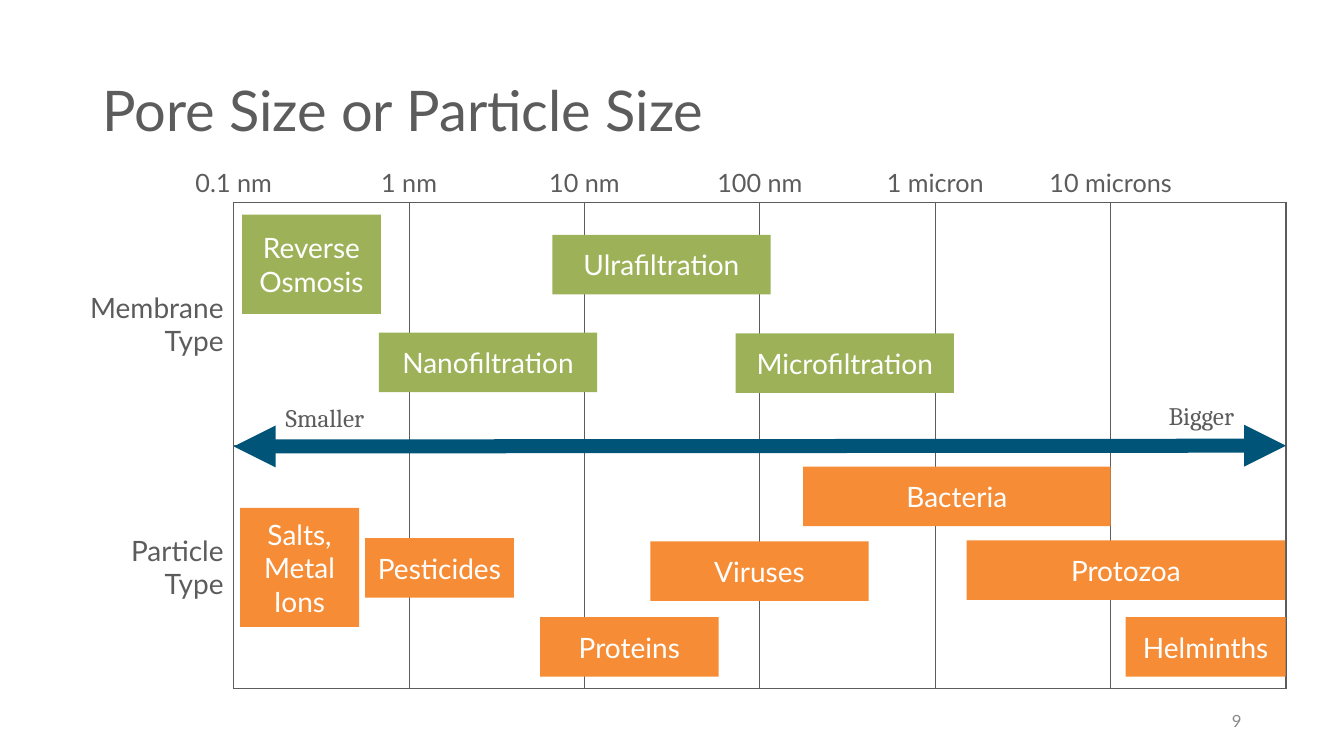
from dataclasses import dataclass

from lxml.etree import SubElement
from pptx import Presentation
from pptx.dml.color import RGBColor
from pptx.enum.shapes import MSO_CONNECTOR as Connector, MSO_SHAPE as Shape
from pptx.enum.text import MSO_ANCHOR as Anchor, MSO_AUTO_SIZE as AutoSize, PP_ALIGN as Align
from pptx.oxml import parse_xml
from pptx.oxml.ns import nsdecls, qn
from pptx.slide import Slide
from pptx.table import _Cell as Cell
from pptx.text.text import TextFrame
from pptx.util import Cm, Pt


@dataclass(frozen=True)
class Theme:
    text: str = "5C5C5C"
    page_number: str = "898989"
    on_bar: str = "FFFFFF"
    membrane: str = "9DB258"
    particle: str = "F68D36"
    arrow: str = "005478"
    font: str = "Lato"
    direction_font: str = "Cambria"
    title_size: int = 40
    body_size: int = 20
    label_size: int = 18
    number_size: int = 12
    arrow_width: int = 10
    grid_width: int = 1


THEME = Theme()


@dataclass(frozen=True)
class Bar:
    """A size range; lengths in centimetres."""
    text: str
    left: float
    top: float
    width: float
    height: float = 1.5


@dataclass(frozen=True)
class Tick:
    text: str
    width: float


TABLE_LEFT, TABLE_TOP = 1.47, 5.11
COLUMN_WIDTH, ROW_HEIGHT = 4.42, 6.12
COLUMN_COUNT = 7
GRID_LEFT = TABLE_LEFT + COLUMN_WIDTH
GRID_RIGHT = TABLE_LEFT + COLUMN_COUNT * COLUMN_WIDTH
ROW_LABELS = ("Membrane\nType", "Particle Type")

TICKS = (
    Tick("0.1 nm", 2.49),
    Tick("1 nm", 2.49),
    Tick("10 nm", 2.49),
    Tick("100 nm", 2.9),
    Tick("1 micron", 3.07),
    Tick("10 microns", 3.66),
)
MEMBRANES = (
    Bar("Reverse\nOsmosis", 6.1, 5.41, 3.5, 2.5),
    Bar("Nanofiltration", 9.55, 8.38, 5.5),
    Bar("Ulrafiltration", 13.92, 5.92, 5.5),
    Bar("Microfiltration", 18.54, 8.4, 5.5),
)
PARTICLES = (
    Bar("Salts, Metal Ions", 6.05, 12.8, 3, 3),
    Bar("Pesticides", 9.2, 13.56, 3.75),
    Bar("Proteins", 13.61, 15.55, 4.5),
    Bar("Viruses", 16.39, 13.64, 5.5),
    Bar("Bacteria", 20.24, 11.76, 7.75),
    Bar("Protozoa", 24.36, 13.62, 8.03),
    Bar("Helminths", 28.37, 15.55, 4.03),
)


def write_text(frame: TextFrame, text: str, *, size: int = THEME.body_size,
               color: str = THEME.text, font: str = THEME.font,
               align: Align = Align.LEFT, line_spacing: float = 1.0) -> None:
    """Write one paragraph per line of text."""
    for index, line in enumerate(text.split("\n")):
        paragraph = frame.add_paragraph() if index else frame.paragraphs[0]
        paragraph.alignment = align
        paragraph.line_spacing = line_spacing
        run = paragraph.add_run()
        run.text = line
        run.font.size = Pt(size)
        run.font.name = font
        run.font.color.rgb = RGBColor.from_string(color)


def add_text_box(slide: Slide, text: str, left: float, top: float, width: float,
                 height: float, *, anchor: Anchor = Anchor.TOP, wrap: bool = True,
                 grow: bool = False, **text_format) -> None:
    box = slide.shapes.add_textbox(Cm(left), Cm(top), Cm(width), Cm(height))
    frame = box.text_frame
    frame.word_wrap = wrap
    frame.auto_size = AutoSize.SHAPE_TO_FIT_TEXT if grow else AutoSize.NONE
    frame.vertical_anchor = anchor
    write_text(frame, text, **text_format)


def set_borders(cell: Cell, visible_sides: str) -> None:
    """Draw the sides named by L, R, T and B, and hide the others."""
    properties = cell._tc.get_or_add_tcPr()
    for index, side in enumerate("LRTB"):
        fill = (f'<a:solidFill><a:srgbClr val="{THEME.text}"/></a:solidFill>'
                if side in visible_sides else "<a:noFill/>")
        border = parse_xml(f'<a:ln{side} {nsdecls("a")} w="{Pt(THEME.grid_width)}">'
                           f'{fill}</a:ln{side}>')
        properties.insert(index, border)


def add_grid(slide: Slide) -> None:
    rows = len(ROW_LABELS)
    table = slide.shapes.add_table(
        rows, COLUMN_COUNT, Cm(TABLE_LEFT), Cm(TABLE_TOP),
        Cm(COLUMN_COUNT * COLUMN_WIDTH), Cm(rows * ROW_HEIGHT)).table
    table.first_row = False
    table.horz_banding = False
    for column in table.columns:
        column.width = Cm(COLUMN_WIDTH)
    for row, label in zip(table.rows, ROW_LABELS):
        row.height = Cm(ROW_HEIGHT)
        for index, cell in enumerate(row.cells):
            cell.fill.background()
            set_borders(cell, "LRTB" if index else "R")
        label_cell = row.cells[0]
        label_cell.vertical_anchor = Anchor.MIDDLE
        write_text(label_cell.text_frame, label, align=Align.RIGHT)


def add_size_arrow(slide: Slide) -> None:
    arrow = slide.shapes.add_connector(
        Connector.STRAIGHT, Cm(GRID_LEFT), Cm(11.25), Cm(GRID_RIGHT), Cm(11.23))
    arrow.line.color.rgb = RGBColor.from_string(THEME.arrow)
    arrow.line.width = Pt(THEME.arrow_width)
    line = arrow.line._get_or_add_ln()
    for end in ("a:headEnd", "a:tailEnd"):
        SubElement(line, qn(end), type="triangle")
    SubElement(arrow._element.spPr, qn("a:effectLst"))


def add_bar(slide: Slide, bar: Bar, color: str) -> None:
    shape = slide.shapes.add_shape(
        Shape.RECTANGLE, Cm(bar.left), Cm(bar.top), Cm(bar.width), Cm(bar.height))
    shape.shadow.inherit = False
    shape.fill.solid()
    shape.fill.fore_color.rgb = RGBColor.from_string(color)
    shape.line.fill.background()
    shape.text_frame.word_wrap = True
    shape.text_frame.vertical_anchor = Anchor.MIDDLE
    write_text(shape.text_frame, bar.text, color=THEME.on_bar, align=Align.CENTER)


def main() -> None:
    presentation = Presentation()
    presentation.slide_width, presentation.slide_height = Cm(33.87), Cm(19.05)
    slide = presentation.slides.add_slide(presentation.slide_layouts[6])

    add_text_box(slide, "Pore Size or Particle Size", 2.33, 1.01, 29.21, 3.68,
                 anchor=Anchor.MIDDLE, size=THEME.title_size, line_spacing=0.9)
    add_text_box(slide, "9", 23.92, 17.66, 7.62, 1.01, anchor=Anchor.MIDDLE,
                 size=THEME.number_size, color=THEME.page_number, align=Align.RIGHT)
    add_grid(slide)
    add_size_arrow(slide)

    for index, tick in enumerate(TICKS):
        center = GRID_LEFT + index * COLUMN_WIDTH
        add_text_box(slide, tick.text, center - tick.width / 2, 4.1, tick.width, 1.03,
                     wrap=False, grow=True, size=THEME.label_size, align=Align.CENTER)
    add_text_box(slide, "Smaller", 6.95, 10.02, 3.5, 1.03, grow=True,
                 size=THEME.label_size, font=THEME.direction_font)
    add_text_box(slide, "Bigger", 28.35, 9.97, 3, 1.03, grow=True, align=Align.RIGHT,
                 size=THEME.label_size, font=THEME.direction_font)

    for bars, color in ((MEMBRANES, THEME.membrane), (PARTICLES, THEME.particle)):
        for bar in bars:
            add_bar(slide, bar, color)

    presentation.save("out.pptx")


if __name__ == "__main__":
    main()
